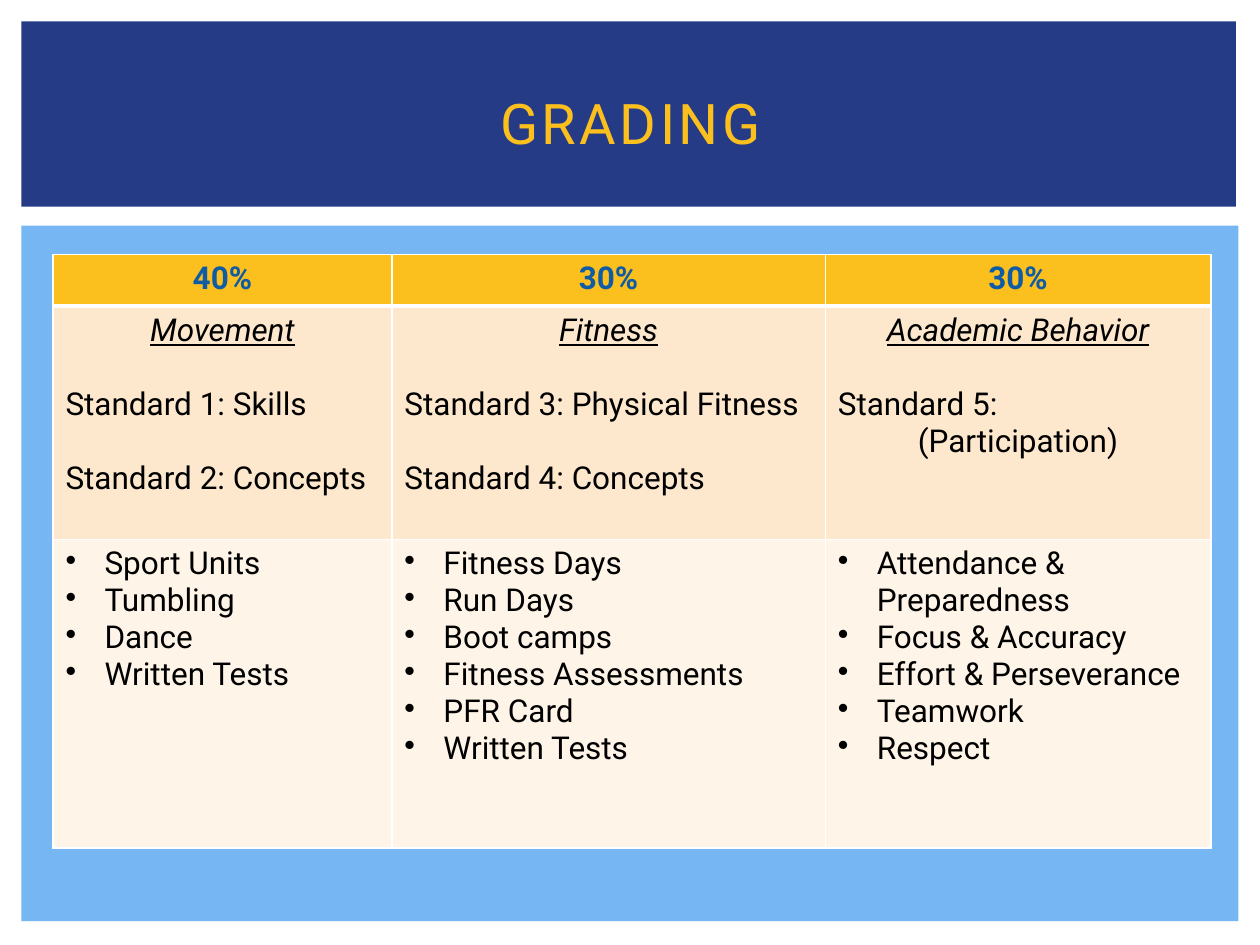
from lxml import etree
from pptx import Presentation
from pptx import util as u
from pptx.dml.color import RGBColor
from pptx.enum import shapes, text
from pptx.oxml import ns

NAVY = RGBColor(0x26, 0x3B, 0x86)
SKY = RGBColor(0x76, 0xB6, 0xF2)
GOLD = RGBColor(0xFB, 0xC0, 0x1E)
BLUE = RGBColor(0x10, 0x5C, 0xA4)
PEACH = RGBColor(0xFD, 0xE8, 0xCD)
CREAM = RGBColor(0xFE, 0xF4, 0xE8)
BLACK = RGBColor(0, 0, 0)
WHITE = RGBColor(0xFF, 0xFF, 0xFF)
CENTER, LEFT = text.PP_ALIGN.CENTER, text.PP_ALIGN.LEFT

COLUMN_WIDTHS = (2.69, 3.44, 3.06)
ROW_HEIGHTS = (0.41, 1.85, 2.45)
WEIGHTS = ("40%", "30%", "30%")
STANDARDS = (
    ("Movement", (("Standard 1: Skills", LEFT, 21), ("Standard 2: Concepts", LEFT, 21))),
    ("Fitness", (("Standard 3: Physical Fitness", LEFT, 21), ("Standard 4: Concepts", LEFT, 21))),
    ("Academic Behavior", (("Standard 5:", LEFT, 21), ("(Participation)", CENTER, 0))),
)
ACTIVITIES = (
    ("Sport Units", "Tumbling", "Dance", "Written Tests"),
    ("Fitness Days", "Run Days", "Boot camps", "Fitness Assessments", "PFR Card", "Written Tests"),
    ("Attendance & Preparedness", "Focus & Accuracy", "Effort & Perseverance", "Teamwork", "Respect"),
)


class GradingSlide:
    """Holds the type style and the current slide, and draws its elements."""

    def __init__(self, page, font="Roboto", size=18):
        self.page, self.font, self.size = page, font, size

    def panel(self, left, top, width, height, color):
        box = self.page.shapes.add_shape(
            shapes.MSO_SHAPE.RECTANGLE, *map(u.Inches, (left, top, width, height)))
        box.shadow.inherit = False
        box.fill.solid()
        box.fill.fore_color.rgb = color
        box.line.fill.background()

    def paragraph(self, frame, words, color=BLACK, align=LEFT, size=None, before=0,
                  bold=False, emphasis=False):
        para = frame.paragraphs[0]
        if para.runs:
            para = frame.add_paragraph()
        para.add_run().text = words
        para.alignment = align
        para.space_before = u.Pt(before)
        font = para.font
        font.name, font.size = self.font, u.Pt(size or self.size)
        font.bold, font.italic, font.underline = bold, emphasis, emphasis
        font.color.rgb = color
        return para

    def bullet(self, frame, words):
        properties = self.paragraph(frame, words)._p.get_or_add_pPr()
        properties.set("marL", str(u.Inches(0.31)))
        properties.set("indent", str(u.Inches(-0.31)))
        mark = etree.Element(ns.qn("a:buChar"), char="•")
        properties.find(ns.qn("a:defRPr")).addprevious(mark)

    def title(self, words, left, top, width, height):
        box = self.page.shapes.add_textbox(*map(u.Inches, (left, top, width, height)))
        frame = box.text_frame
        frame.word_wrap = True
        frame.vertical_anchor = text.MSO_ANCHOR.MIDDLE
        para = self.paragraph(frame, words, GOLD, CENTER, size=32)
        para.runs[0]._r.get_or_add_rPr().set("spc", "200")

    def table(self, left, top, widths, heights):
        frame = self.page.shapes.add_table(
            len(heights), len(widths),
            *map(u.Inches, (left, top, sum(widths), sum(heights))))
        grid = frame.table
        grid.first_row = grid.horz_banding = False
        for column, width in zip(grid.columns, widths):
            column.width = u.Inches(width)
        for row, height in zip(grid.rows, heights):
            row.height = u.Inches(height)
        return grid

    def cell(self, cell, color, top=1, bottom=1):
        properties = cell._tc.get_or_add_tcPr()
        for side, points in zip("LRTB", (1, 1, top, bottom)):
            line = etree.SubElement(properties, ns.qn(f"a:ln{side}"), w=str(u.Pt(points)))
            fill = etree.SubElement(line, ns.qn("a:solidFill"))
            etree.SubElement(fill, ns.qn("a:srgbClr"), val=str(WHITE))
        cell.fill.solid()
        cell.fill.fore_color.rgb = color
        return cell.text_frame


def main():
    deck = Presentation()
    deck.slide_width, deck.slide_height = u.Inches(10), u.Inches(7.5)
    slide = GradingSlide(deck.slides.add_slide(deck.slide_layouts[6]))

    slide.panel(0.17, 1.79, 9.66, 5.52, SKY)
    slide.panel(0.17, 0.17, 9.64, 1.47, NAVY)
    grid = slide.table(0.42, 2.02, COLUMN_WIDTHS, ROW_HEIGHTS)
    columns = zip(WEIGHTS, STANDARDS, ACTIVITIES)
    for index, (weight, (area, standards), activities) in enumerate(columns):
        header = slide.cell(grid.cell(0, index), GOLD, bottom=3)
        slide.paragraph(header, weight, BLUE, CENTER, bold=True)

        body = slide.cell(grid.cell(1, index), PEACH, top=3)
        slide.paragraph(body, area, align=CENTER, emphasis=True)
        for words, align, before in standards:
            slide.paragraph(body, words, align=align, before=before)

        listing = slide.cell(grid.cell(2, index), CREAM)
        for activity in activities:
            slide.bullet(listing, activity)
    slide.title("GRADING", 0.42, 0.39, 9.17, 1.15)

    deck.save("out.pptx")


if __name__ == "__main__":
    main()
